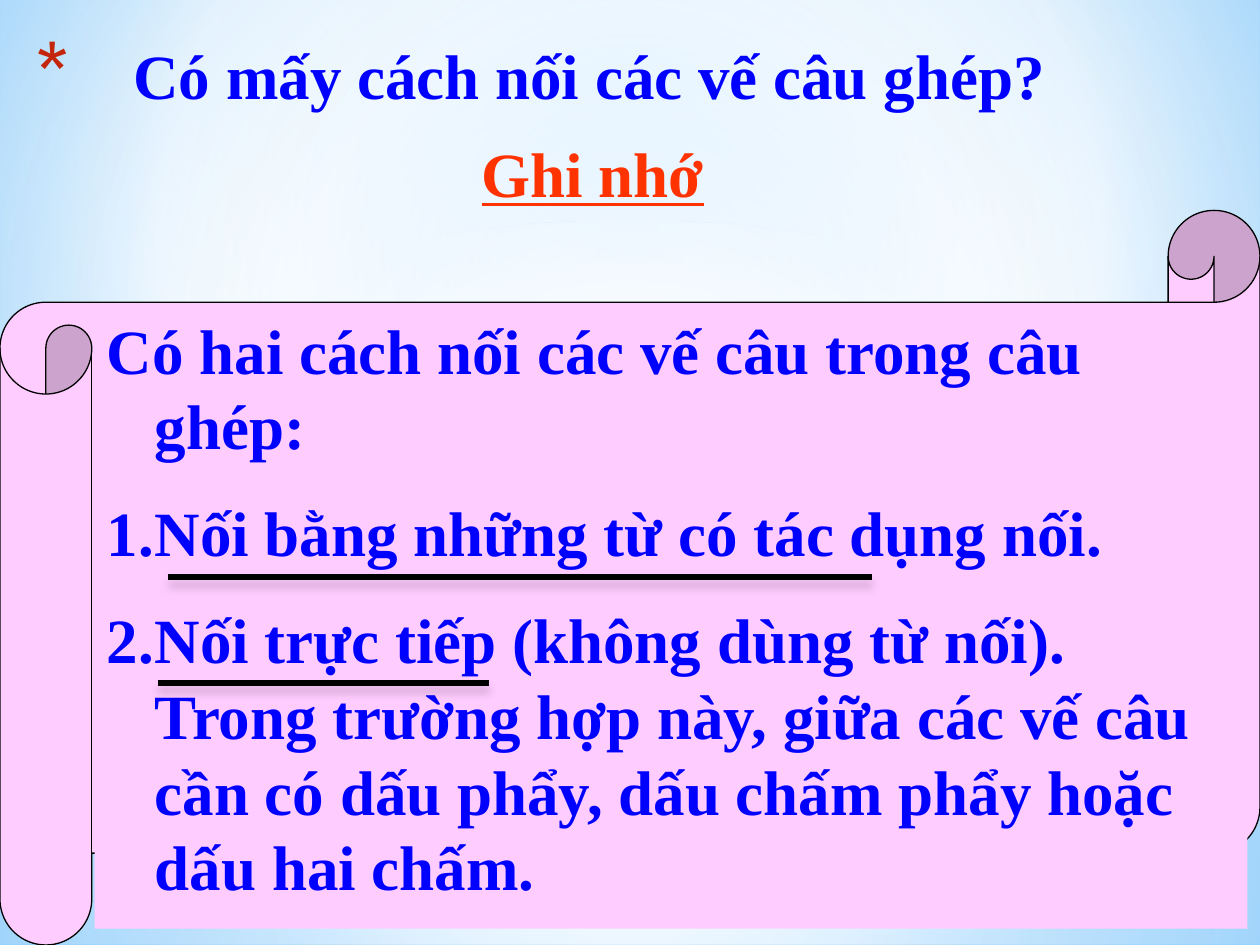
import pptx
import pptx.dml.color
import pptx.enum.shapes
import pptx.enum.text
import pptx.oxml
import pptx.oxml.ns
import pptx.util
from pptx.util import Inches

SHAPE = pptx.enum.shapes.MSO_SHAPE
ALIGN = pptx.enum.text.PP_ALIGN
NS = 'xmlns:a="http://schemas.openxmlformats.org/drawingml/2006/main"'
qn = pptx.oxml.ns.qn


class Theme:
    white, sky = "FFFFFF", "B4DCFA"
    blue, red, star = "0000FF", "FF3300", "C3260C"
    paper, ink = "FFCCFF", "000000"
    font, star_font = "Times New Roman", "Karla"
    size, gap = 36, 18


def rgb(value):
    return pptx.dml.color.RGBColor.from_string(value)


def xml(text):
    return pptx.oxml.parse_xml(f"<a:root {NS}>{text}</a:root>")[0]


def set_gradient(fill, owner, stops, focus=None):
    """Stops are (position, colour, opacity); focus is l, t, r, b, or None for top to bottom."""
    fill.gradient()
    gs = "".join(
        f'<a:gs pos="{pos * 1000}"><a:srgbClr val="{color}">'
        f'<a:alpha val="{alpha * 1000}"/></a:srgbClr></a:gs>'
        for pos, color, alpha in stops)
    if focus:
        sides = " ".join(f'{k}="{v * 1000}"' for k, v in zip("ltrb", focus))
        way = f'<a:path path="circle"><a:fillToRect {sides}/></a:path>'
    else:
        way = '<a:lin ang="5400000" scaled="0"/>'
    old = next(owner.iter(qn("a:gradFill")))
    old.getparent().replace(old, xml(
        f'<a:gradFill rotWithShape="1"><a:gsLst>{gs}</a:gsLst>{way}</a:gradFill>'))


def add_plain(s, kind, box, color=None, line=None):
    sp = s.shapes.add_shape(kind, *map(Inches, box))
    sp.shadow.inherit = False
    if color:
        sp.fill.solid()
        sp.fill.fore_color.rgb = rgb(color)
    if line:
        sp.line.color.rgb = rgb(line)
        sp.line.width = pptx.util.Pt(0.75)
    else:
        sp.line.fill.background()
    return sp


def write(p, text, color=Theme.blue, align=ALIGN.LEFT, underline=None):
    p.alignment = align
    r = p.add_run()
    r.text = text
    style = {"name": Theme.font, "size": pptx.util.Pt(Theme.size),
             "bold": True, "underline": underline}
    for key, value in style.items():
        setattr(r.font, key, value)
    r.font.color.rgb = rgb(color)


def hang(p, indent, *bullet):
    """Give a paragraph a hanging indent and the bullet elements."""
    pPr = p._p.get_or_add_pPr()
    pPr.set("marL", str(Inches(indent)))
    pPr.set("indent", str(-Inches(indent)))
    for part in bullet:
        pPr.append(xml(part))


def add_text_box(s, box):
    tf = s.shapes.add_textbox(*map(Inches, box)).text_frame
    tf.word_wrap = True
    return tf


def add_backdrop(s, box):
    x, y, w, h = box
    white, sky, centre = Theme.white, Theme.sky, (50, 50, 50, 50)
    set_gradient(s.background.fill, s._element,
                 [(0, "9ED5FF", 100), (60, white, 100), (100, "5BB9FF", 100)],
                 (20, 10, 20, 60))
    split = 5.58
    layers = [
        (SHAPE.RECTANGLE, split, h - split,
         [(0, white, 91), (37, white, 76), (100, sky, 79)], centre),
        (SHAPE.RECTANGLE, 0, split,
         [(0, white, 89), (48, white, 62), (100, sky, 79)], centre),
        (SHAPE.RECTANGLE, 4.12, 2.5,
         [(0, white, 0), (29, white, 30), (45, sky, 40),
          (55, white, 26), (65, sky, 60), (100, white, 0)], None),
        (SHAPE.OVAL, 1.75, split, [(0, white, 100), (56, white, 0)], centre),
    ]
    for kind, top, height, stops, focus in layers:
        sp = add_plain(s, kind, (x, y + top, w, height))
        set_gradient(sp.fill, sp._element, stops, focus)


def add_question(s, box):
    tf = add_text_box(s, box)
    tf.margin_top = Inches(0.12)
    p = tf.paragraphs[0]
    write(p, "Có mấy cách nối các vế câu ghép?")
    hang(p, 0.79,
         f'<a:buClr><a:srgbClr val="{Theme.star}"/></a:buClr>',
         '<a:buSzPct val="147000"/>',
         f'<a:buFont typeface="{Theme.star_font}"/>',
         '<a:buChar char="*"/>')


def add_heading(s, box):
    write(add_text_box(s, box).paragraphs[0], "Ghi nhớ", Theme.red, ALIGN.CENTER, True)


def add_scroll(s, box):
    x, y, w, h = box
    scroll = add_plain(s, SHAPE.HORIZONTAL_SCROLL, box, Theme.paper, Theme.ink)
    scroll.adjustments[0] = 0.125
    page = add_plain(s, SHAPE.RECTANGLE, (x + 0.75, y + 0.75, w - 0.85, h - 0.88), Theme.paper)
    tf = page.text_frame
    tf.word_wrap = True
    tf.vertical_anchor = pptx.enum.text.MSO_ANCHOR.TOP
    number = '<a:buFont typeface="+mj-lt"/>', '<a:buAutoNum type="arabicPeriod"/>'
    rules = [
        ("Có hai cách nối các vế câu trong câu ghép:", ()),
        ("Nối bằng những từ có tác dụng nối.", number),
        ("Nối trực tiếp (không dùng từ nối). Trong trường hợp này, giữa các vế câu "
         "cần có dấu phẩy, dấu chấm phẩy hoặc dấu hai chấm.", number),
    ]
    for i, (text, bullet) in enumerate(rules):
        p = tf.add_paragraph() if i else tf.paragraphs[0]
        write(p, text)
        p.space_before = pptx.util.Pt(Theme.gap)
        hang(p, 0.38, *bullet)


def add_underline(s, x1, x2, y):
    ln = s.shapes.add_connector(pptx.enum.shapes.MSO_CONNECTOR.STRAIGHT,
                                *map(Inches, (x1, y, x2, y)))
    ln.line.color.rgb = rgb(Theme.ink)
    ln.line.width = pptx.util.Pt(3)
    ln._element.spPr.append(xml(
        '<a:effectLst><a:outerShdw blurRad="63500" dist="50800" dir="5400000">'
        f'<a:srgbClr val="{Theme.ink}"><a:alpha val="20000"/></a:srgbClr>'
        '</a:outerShdw></a:effectLst>'))


def main():
    prs = pptx.Presentation()
    prs.slide_width, prs.slide_height = Inches(10), Inches(7.5)
    s = prs.slides.add_slide(prs.slide_layouts[6])
    add_backdrop(s, (0, 0, 10, 7.5))
    add_question(s, (0.17, 0.17, 9.58, 0.67))
    add_heading(s, (3.08, 1.02, 3.25, 0.71))
    add_scroll(s, (0, 1.67, 10, 5.83))
    add_underline(s, 1.33, 6.92, 4.58)
    add_underline(s, 1.25, 3.88, 5.42)
    prs.save("out.pptx")


if __name__ == "__main__":
    main()
